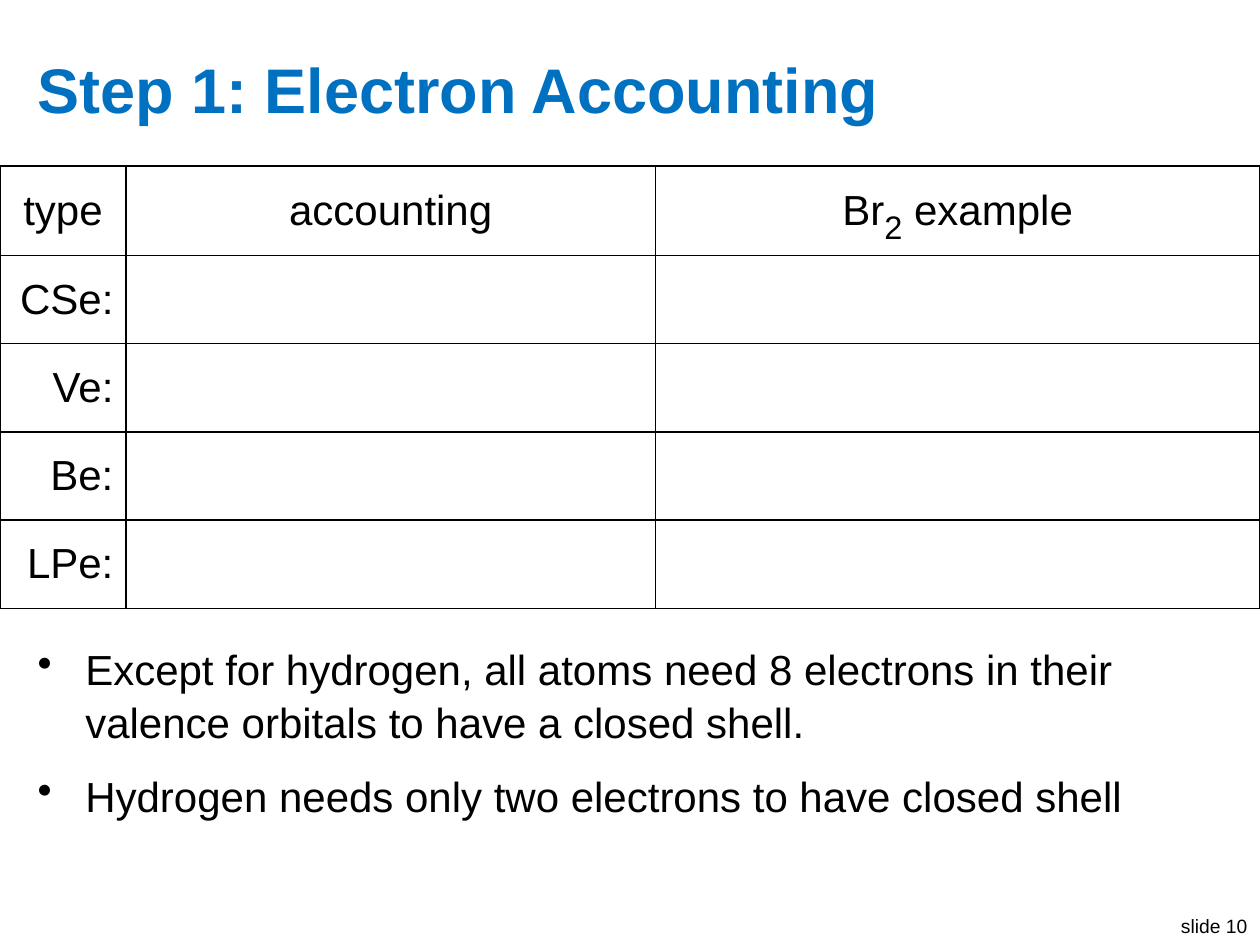
import pptx
import pptx.dml.color
import pptx.enum.text
import pptx.oxml
import pptx.util
from pptx.oxml.ns import qn

Cm = pptx.util.Cm
Pt = pptx.util.Pt
ALIGN = pptx.enum.text.PP_ALIGN
ANCHOR = pptx.enum.text.MSO_ANCHOR

BLACK = pptx.dml.color.RGBColor(0x00, 0x00, 0x00)
WHITE = pptx.dml.color.RGBColor(0xFF, 0xFF, 0xFF)
BLUE = pptx.dml.color.RGBColor(0x00, 0x70, 0xC0)

HEADER = ["type", "accounting", ("Br", "2", " example")]
ROW_LABELS = ["CSe:", "Ve:", "Be:", "LPe:"]
COLUMN_WIDTHS = [2.54, 10.67, 12.19]
ROW_HEIGHT = 1.78
BULLETS = [
    "Except for hydrogen, all atoms need 8 electrons in their "
    "valence orbitals to have a closed shell.",
    "Hydrogen needs only two electrons to have closed shell",
]


class SlideBuilder:
    font_name = "Arial"
    body_size = 24
    subscript_size = 32

    def __init__(self, slide):
        self.slide = slide

    def run(self, paragraph, text, color=BLACK, **font_format):
        run = paragraph.add_run()
        run.text = text
        values = {"name": self.font_name, "size": Pt(self.body_size), **font_format}
        for name, value in values.items():
            setattr(run.font, name, value)
        run.font.color.rgb = color
        return run

    def subscript(self, paragraph, text):
        run = self.run(paragraph, text, size=Pt(self.subscript_size))
        run.font._element.set("baseline", "-25000")

    def text_box(self, left, top, width, height, **frame_format):
        box = self.slide.shapes.add_textbox(Cm(left), Cm(top), Cm(width), Cm(height))
        for name, value in {"word_wrap": True, **frame_format}.items():
            setattr(box.text_frame, name, value)
        return box.text_frame

    def line(self, text, position, alignment, color, frame_format, **font_format):
        """Add a text box that holds a single paragraph."""
        paragraph = self.text_box(*position, **frame_format).paragraphs[0]
        paragraph.alignment = alignment
        self.run(paragraph, text, color, **font_format)

    def bullet_list(self, items, position):
        frame = self.text_box(*position)
        for index, item in enumerate(items):
            paragraph = frame.add_paragraph() if index else frame.paragraphs[0]
            paragraph.space_before = Pt(12)
            paragraph.line_spacing = 1.05
            properties = paragraph._p.get_or_add_pPr()
            properties.set("marL", str(Cm(0.96)))
            properties.set("indent", str(-Cm(0.96)))
            bullet = properties.makeelement(qn("a:buChar"), {"char": "•"})
            properties.append(bullet)
            self.run(paragraph, item)

    def border(self, cell):
        """Draw a thin black line on all four sides of a cell."""
        properties = cell._tc.get_or_add_tcPr()
        for index, side in enumerate(("lnL", "lnR", "lnT", "lnB")):
            properties.insert(index, pptx.oxml.parse_xml(
                f'<a:{side} xmlns:a="http://schemas.openxmlformats.org/drawingml/2006/main"'
                f' w="{Pt(1)}"><a:solidFill><a:srgbClr val="{BLACK}"/></a:solidFill></a:{side}>'
            ))

    def table(self, rows, left, top, column_widths, row_height):
        table = self.slide.shapes.add_table(
            len(rows), len(column_widths), Cm(left), Cm(top),
            Cm(sum(column_widths)), Cm(row_height * len(rows)),
        ).table
        for column, width in zip(table.columns, column_widths):
            column.width = Cm(width)
        for row_index, row in enumerate(rows):
            for column_index, content in enumerate(row):
                cell = table.cell(row_index, column_index)
                cell.vertical_anchor = ANCHOR.MIDDLE
                cell.fill.solid()
                cell.fill.fore_color.rgb = WHITE
                self.border(cell)
                if content:
                    paragraph = cell.text_frame.paragraphs[0]
                    paragraph.alignment = ALIGN.RIGHT if row_index else ALIGN.CENTER
                    self.cell_text(paragraph, content)

    def cell_text(self, paragraph, content):
        """Write a string, or a (base, subscript, rest) triple."""
        if isinstance(content, str):
            self.run(paragraph, content)
        else:
            base, index, rest = content
            self.run(paragraph, base)
            self.subscript(paragraph, index)
            self.run(paragraph, rest)


def main():
    presentation = pptx.Presentation()
    presentation.slide_width = Cm(25.4)
    presentation.slide_height = Cm(19.05)
    slide = presentation.slides.add_slide(presentation.slide_layouts[6])
    builder = SlideBuilder(slide)

    builder.line("slide 10", (23.5, 18.31, 1.9, 0.74), ALIGN.RIGHT, BLACK,
                 {"word_wrap": False}, size=Pt(11))
    builder.line("Step 1: Electron Accounting", (0.51, 0.76, 24.38, 2.03),
                 ALIGN.LEFT, BLUE, {"vertical_anchor": ANCHOR.MIDDLE},
                 size=Pt(36), bold=True)
    builder.bullet_list(BULLETS, (0.51, 12.8, 24.38, 5.64))
    rows = [HEADER] + [[label, "", ""] for label in ROW_LABELS]
    builder.table(rows, 0, 3.35, COLUMN_WIDTHS, ROW_HEIGHT)

    presentation.save("out.pptx")


if __name__ == "__main__":
    main()
